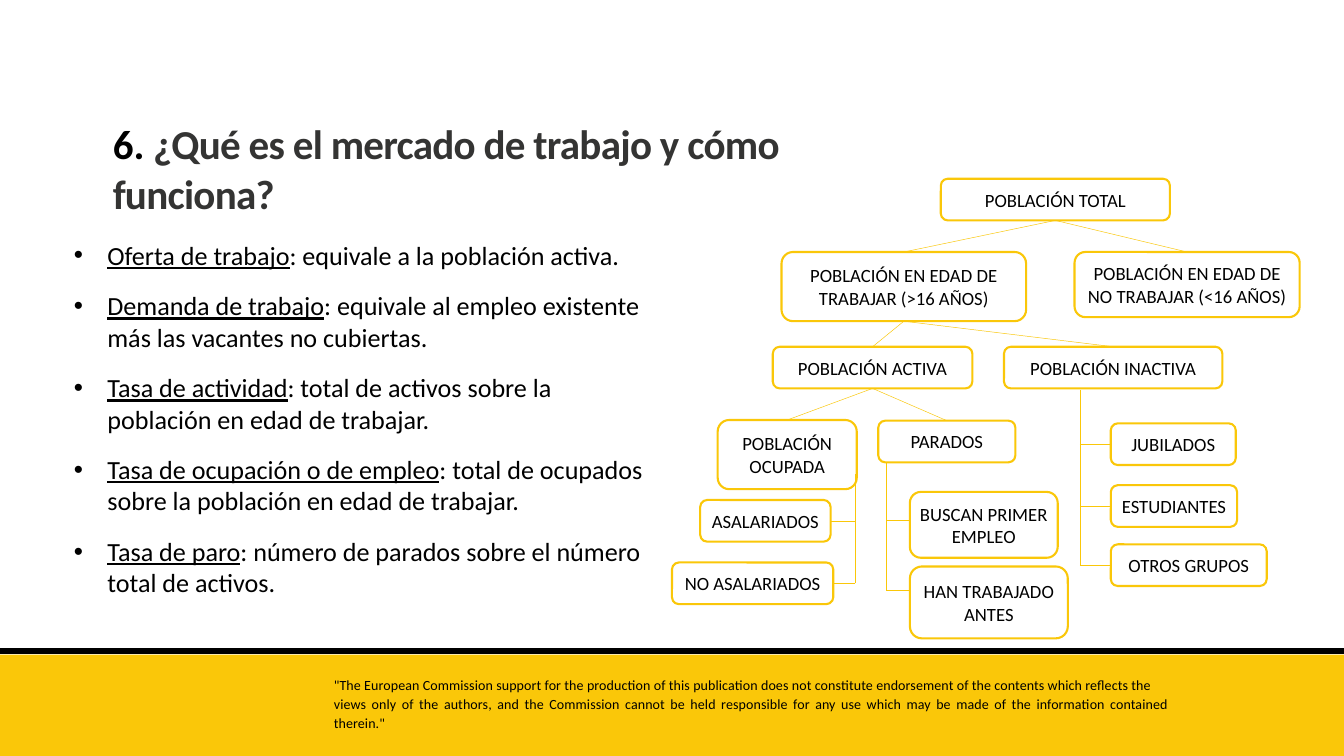
from lxml.etree import SubElement
from pptx import Presentation
from pptx.dml.color import RGBColor
from pptx.enum.shapes import MSO_CONNECTOR, MSO_SHAPE
from pptx.enum.text import MSO_ANCHOR, PP_ALIGN
from pptx.oxml.ns import qn
from pptx.util import Inches, Pt

THEME = {
    "font": "Calibri",
    "black": RGBColor.from_string("000000"),
    "gray": RGBColor.from_string("343433"),
    "white": RGBColor.from_string("FFFFFF"),
    "gold": RGBColor.from_string("FAC709"),
    "title": Pt(44), "body": Pt(28), "node": Pt(20), "note": Pt(15),
    "rule": Pt(6.75), "border": Pt(2.25), "link": Pt(0.5),
}
COLS, ROWS = 20, 11.25
FOOTER_ROW = 9.74

TITLE = ("6.", " ¿Qué es el mercado de trabajo y cómo funciona?")
TERMS = [
    ("Oferta de trabajo", ": equivale a la población activa."),
    ("Demanda de trabajo", ": equivale al empleo existente más las vacantes no cubiertas."),
    ("Tasa de actividad", ": total de activos sobre la población en edad de trabajar."),
    ("Tasa de ocupación o de empleo", ": total de ocupados sobre la población en edad de trabajar."),
    ("Tasa de paro", ": número de parados sobre el número total de activos."),
]
NOTE = [
    ("\"The European Commission support for the production of this publication does not "
     "constitute endorsement of the contents which reflects the", Pt(16.1)),
    ("views only of the authors, and the Commission cannot be held responsible for any use "
     "which may be made of the information contained therein.\"", 1.13),
]
NODES = {
    "total": ("POBLACIÓN TOTAL", 14, 2.66, 3.41, 0.62),
    "edad": ("POBLACIÓN EN EDAD DE TRABAJAR (>16 AÑOS)", 11.63, 3.75, 3.64, 1.03),
    "menores": ("POBLACIÓN EN EDAD DE NO TRABAJAR (<16 AÑOS)", 15.99, 3.75, 3.35, 0.97),
    "activa": ("POBLACIÓN ACTIVA", 11.5, 5.16, 2.97, 0.62),
    "inactiva": ("POBLACIÓN INACTIVA", 14.94, 5.16, 3.25, 0.62),
    "ocupada": ("POBLACIÓN OCUPADA", 10.68, 6.25, 2.07, 1.03),
    "parados": ("PARADOS", 13.07, 6.26, 2.04, 0.62),
    "asalariados": ("ASALARIADOS", 10.42, 7.44, 1.94, 0.62),
    "no_asalariados": ("NO ASALARIADOS", 10, 8.37, 2.4, 0.62),
    "buscan": ("BUSCAN PRIMER EMPLEO", 13.54, 7.32, 2.2, 0.98),
    "antes": ("HAN TRABAJADO ANTES", 13.54, 8.43, 2.35, 1.07),
    "jubilados": ("JUBILADOS", 16.53, 6.3, 1.86, 0.62),
    "estudiantes": ("ESTUDIANTES", 16.53, 7.22, 1.88, 0.62),
    "otros": ("OTROS GRUPOS", 16.53, 8.1, 2.32, 0.62),
}
BRANCHES = {
    "total": ("edad", "menores"),
    "edad": ("activa", "inactiva"),
    "activa": ("ocupada", "parados"),
}
TRUNKS = [
    (16.07, 5.8, 1, {"jubilados": None, "estudiantes": None, "otros": None}),
    (12.73, 7.06, 3, {"asalariados": None, "no_asalariados": None}),
    (13.19, 6.88, 1, {"buscan": 7.74, "antes": 8.79}),
]

prs = Presentation()
prs.slide_width, prs.slide_height = Inches(20), Inches(11.25)
s = prs.slides.add_slide(prs.slide_layouts[6])


def col(n):
    return round(prs.slide_width * n / COLS)


def row(n):
    return round(prs.slide_height * n / ROWS)


def apply(obj, formats):
    for name, value in formats.items():
        setattr(obj, name, value)


def add_run(p, text, size, color="black", spacing=None, **formats):
    r = p.add_run()
    r.text = text
    apply(r.font, {"name": THEME["font"], "size": THEME[size], **formats})
    r.font.color.rgb = THEME[color]
    if spacing:
        r.font._element.set("spc", str(spacing))


def add_text(x, y, w, h):
    tf = s.shapes.add_textbox(col(x), row(y), col(w), row(h)).text_frame
    tf.word_wrap = True
    return tf


def paragraphs(tf, items):
    for i, item in enumerate(items):
        yield tf.add_paragraph() if i else tf.paragraphs[0], item


def add_line(x1, y1, x2, y2, color="gold", width="link"):
    c = s.shapes.add_connector(MSO_CONNECTOR.STRAIGHT, col(x1), row(y1), col(x2), row(y2))
    c.line.color.rgb = THEME[color]
    c.line.width = THEME[width]
    SubElement(c._element.spPr, qn("a:effectLst"))
    return c


def add_node(text, x, y, w, h):
    sp = s.shapes.add_shape(MSO_SHAPE.ROUNDED_RECTANGLE, col(x), row(y), col(w), row(h))
    sp.shadow.inherit = False
    sp.fill.solid()
    sp.fill.fore_color.rgb = THEME["white"]
    sp.line.color.rgb = THEME["gold"]
    sp.line.width = THEME["border"]
    tf = sp.text_frame
    apply(tf, {"word_wrap": True, "vertical_anchor": MSO_ANCHOR.MIDDLE,
               "margin_left": col(0.07), "margin_right": col(0.07)})
    p = tf.paragraphs[0]
    p.alignment = PP_ALIGN.CENTER
    add_run(p, text, "node")
    return sp


footer = s.shapes.add_shape(MSO_SHAPE.RECTANGLE, 0, row(FOOTER_ROW), col(COLS), row(ROWS - FOOTER_ROW))
footer.shadow.inherit = False
footer.fill.solid()
footer.fill.fore_color.rgb = THEME["gold"]
footer.line.fill.background()
add_line(0, 9.69, COLS, 9.69, "black", "rule")

for p, (text, spacing) in paragraphs(add_text(4.87, 10.04, 12.63, 0.88), NOTE):
    apply(p, {"alignment": PP_ALIGN.JUSTIFY, "line_spacing": spacing})
    add_run(p, text, "note", spacing=10)

p = add_text(1.58, 1.72, 11, 1.58).paragraphs[0]
add_run(p, TITLE[0], "title", bold=True)
add_run(p, TITLE[1], "title", "gray", spacing=-80, bold=True)

for p, (term, meaning) in paragraphs(add_text(1, 3.51, 8.79, 6.5), TERMS):
    pPr = p._p.get_or_add_pPr()
    pPr.set("marL", str(col(0.5)))
    pPr.set("indent", str(-col(0.5)))
    SubElement(pPr, qn("a:buFont"), typeface="Arial")
    SubElement(pPr, qn("a:buChar"), char="•")
    if term != TERMS[0][0]:
        p.space_before = Pt(20.5)
    add_run(p, term, "body", underline=True)
    add_run(p, meaning, "body")

nodes = {key: add_node(*node) for key, node in NODES.items()}

for parent, children in BRANCHES.items():
    for child in children:
        c = add_line(0, 0, 1, 1)
        c.begin_connect(nodes[parent], 2)
        c.end_connect(nodes[child], 0)

for x, top, side, children in TRUNKS:
    for child, level in children.items():
        _, left, y, w, h = NODES[child]
        end = level or y + h / 2
        c = add_line(x, end, left if side == 1 else left + w, end)
        if level is None:
            c.end_connect(nodes[child], side)
    add_line(x, top, x, end)

prs.save("out.pptx")
